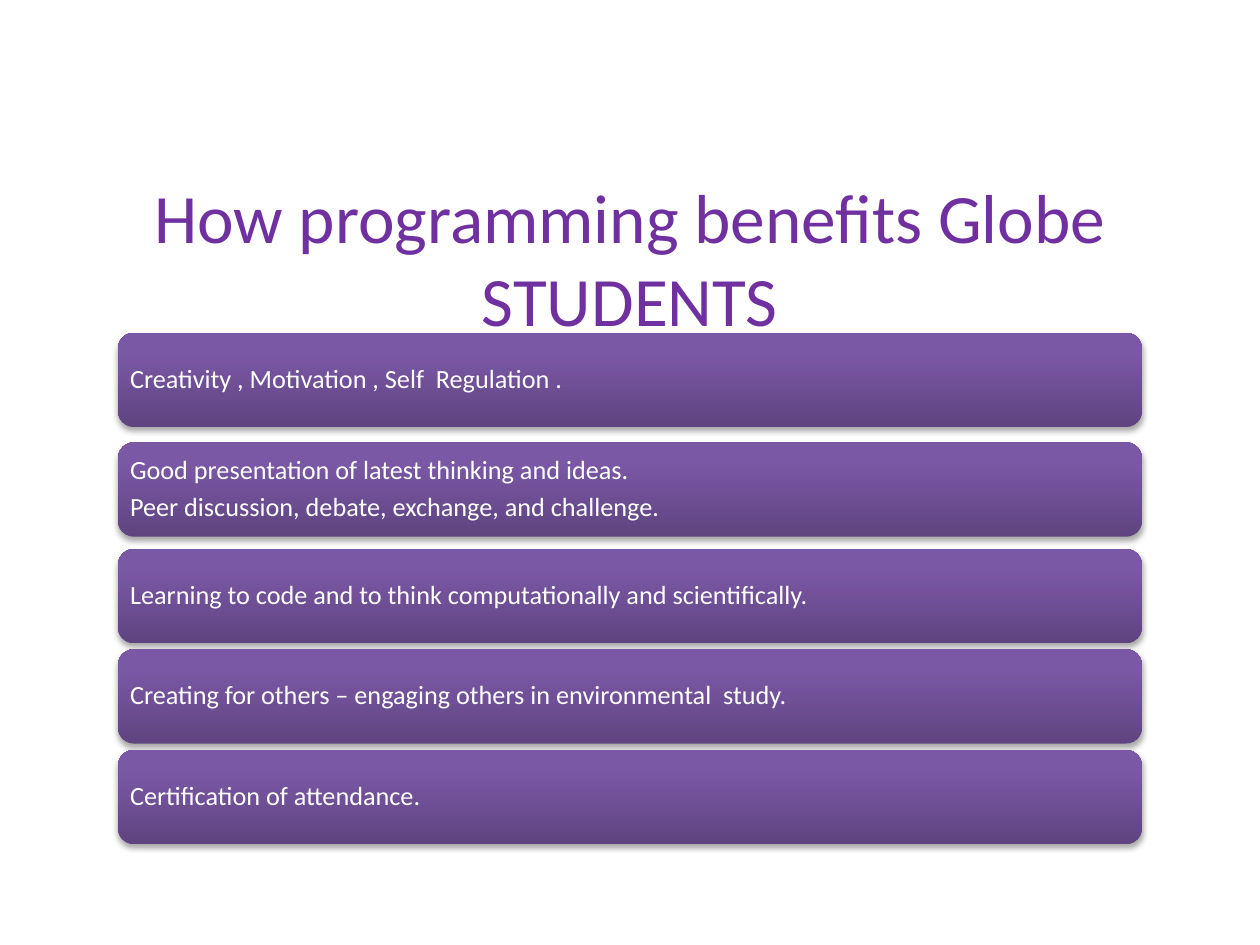
from copy import deepcopy
from dataclasses import dataclass

from lxml.etree import SubElement
from pptx import Presentation
from pptx.dml.color import RGBColor as Rgb
from pptx.enum.shapes import MSO_SHAPE as Shape
from pptx.enum.text import MSO_ANCHOR as Anchor, MSO_AUTO_SIZE as AutoSize, PP_ALIGN as Align
from pptx.oxml.ns import qn
from pptx.util import Cm, Pt


@dataclass(frozen=True)
class Theme:
    """Colours, font and type sizes of the deck."""
    font: str = "Calibri"
    title_size: float = 39.6
    body_size: float = 15
    title: str = "7030A0"
    body: str = "FFFFFF"
    shadow: str = "000000"
    gradient: tuple = ((0, "5F4480"), (0.8, "7B58A6"), (1, "7C57A8"))


class PageBuilder:
    """Draws styled elements on the current page."""

    def __init__(self, page, theme):
        self.page = page
        self.theme = theme

    def set_font(self, para, size, color):
        """Apply the theme font to a paragraph."""
        para.font.name = self.theme.font
        para.font.size = Pt(size)
        para.font.color.rgb = Rgb.from_string(color)

    def title(self, text, left, top, width, height):
        """Place and format the title placeholder."""
        box = self.page.shapes.title
        box.left, box.top, box.width, box.height = map(Cm, (left, top, width, height))
        frame = box.text_frame
        frame.text = text
        frame.auto_size = AutoSize.NONE
        frame.vertical_anchor = Anchor.MIDDLE
        para = frame.paragraphs[0]
        para.alignment = Align.CENTER
        self.set_font(para, self.theme.title_size, self.theme.title)

    def gradient(self, box):
        """Fill a box with the theme gradient, running upwards."""
        box.fill.gradient()
        box.fill.gradient_angle = 90
        stop_list = box._element.spPr.find(".//" + qn("a:gsLst"))
        stop_list.append(deepcopy(stop_list[-1]))
        for stop, (position, color) in zip(box.fill.gradient_stops, self.theme.gradient):
            stop.position = position
            stop.color.rgb = Rgb.from_string(color)

    def shadow(self, box):
        """Give a box a soft shadow below it."""
        box.shadow.inherit = False
        effects = box._element.spPr.find(qn("a:effectLst"))
        outer = SubElement(effects, qn("a:outerShdw"), blurRad=str(Pt(3.1)),
                           dist=str(Pt(1.8)), dir="5400000", rotWithShape="0")
        color = SubElement(outer, qn("a:srgbClr"), val=self.theme.shadow)
        SubElement(color, qn("a:alpha"), val="35000")

    def banner(self, lines, left, top, width, height):
        """Add a rounded banner holding one paragraph per line."""
        box = self.page.shapes.add_shape(
            Shape.ROUNDED_RECTANGLE, *map(Cm, (left, top, width, height)))
        self.gradient(box)
        box.line.fill.background()
        self.shadow(box)
        frame = box.text_frame
        frame.word_wrap = True
        frame.vertical_anchor = Anchor.MIDDLE
        frame.margin_left = frame.margin_right = Cm(0.15)
        frame.margin_top = frame.margin_bottom = Cm(0.15)
        frame.text = "\n".join(lines)
        for para in frame.paragraphs:
            para.alignment = Align.LEFT
            para.line_spacing = 0.9
            para.space_after = Pt(5.25)
            self.set_font(para, self.theme.body_size, self.theme.body)


BENEFITS = (
    (6.71, ["Creativity , Motivation , Self  Regulation ."]),
    (8.92, ["Good presentation of latest thinking and ideas.",
            "Peer discussion, debate, exchange, and challenge."]),
    (11.07, ["Learning to code and to think computationally and scientifically."]),
    (13.09, ["Creating for others – engaging others in environmental  study."]),
    (15.12, ["Certification of attendance."]),
)


def main():
    """Build the deck and save it."""
    deck = Presentation()
    deck.slide_width, deck.slide_height = Cm(25.4), Cm(19.05)
    page = deck.slides.add_slide(deck.slide_layouts[5])
    builder = PageBuilder(page, Theme())
    left, width = 2.38, 20.64
    builder.title("How programming benefits Globe STUDENTS", left, 3.66, width, 3.05)
    for top, lines in BENEFITS:
        builder.banner(lines, left, top, width, 1.9)
    deck.save("out.pptx")


if __name__ == "__main__":
    main()
